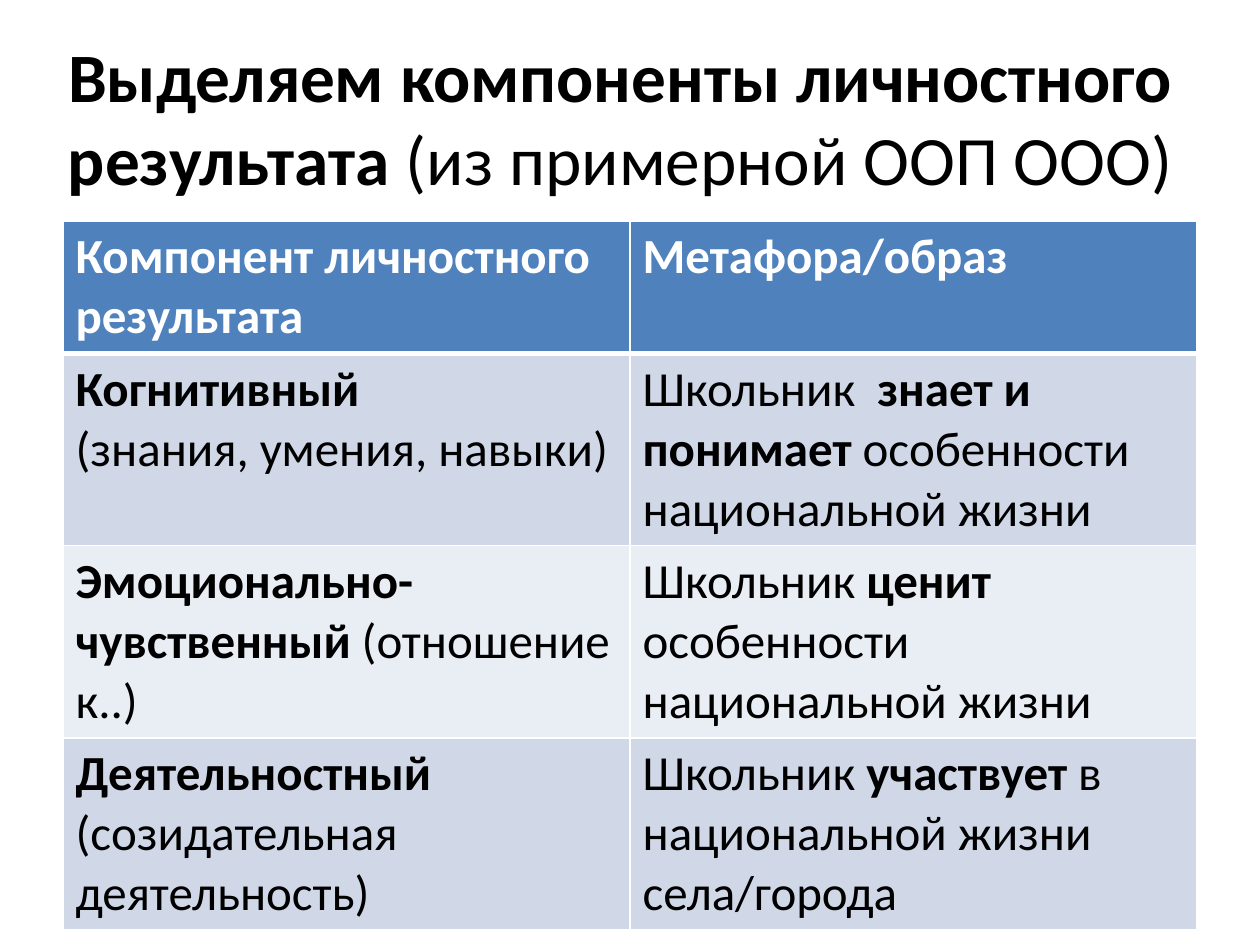
from lxml import etree
from pptx import Presentation
from pptx import util as u
from pptx.dml.color import RGBColor
from pptx.enum import text
from pptx.oxml.ns import qn

PX_PER_INCH = 126
FONT = "Calibri"
COLORS = {
    "header": "4F81BD",
    "odd": "D0D8E8",
    "even": "E9EDF4",
    "border": "FFFFFF",
    "header_text": "FFFFFF",
    "text": "000000",
}

# Each cell is a list of paragraphs; each paragraph is a list of (words, bold).
TITLE = [("Выделяем компоненты личностного результата ", True),
         ("(из примерной ООП ООО)", False)]
ROWS = [
    [[[("Компонент личностного результата", True)]],
     [[("Метафора/образ", True)]]],
    [[[("Когнитивный", True)], [("(знания, умения, навыки)", False)]],
     [[("Школьник  ", False), ("знает и понимает", True),
       (" особенности национальной жизни", False)]]],
    [[[("Эмоционально-чувственный", True), (" (отношение к..)", False)]],
     [[("Школьник ", False), ("ценит ", True),
       ("особенности национальной жизни", False)]]],
    [[[("Деятельностный", True)], [("(созидательная деятельность)", False)]],
     [[("Школьник ", False), ("участвует ", True),
       ("в национальной жизни села/города", False)]]],
]


def px(length):
    return u.Emu(round(length * u.Inches(1) / PX_PER_INCH))


def color(name):
    return RGBColor.from_string(COLORS[name])


def write_spans(para, spans, size, color_name):
    para.font.name = FONT
    para.font.size = u.Pt(size)
    para.font.color.rgb = color(color_name)
    for words, bold in spans:
        span = para.add_run()
        span.text = words
        span.font.bold = bold


def add_title(page):
    title = page.shapes.title
    title.left, title.top = px(44), px(38)
    title.width, title.height = px(1153), px(157)
    frame = title.text_frame
    frame.auto_size = text.MSO_AUTO_SIZE.NONE
    frame.vertical_anchor = text.MSO_ANCHOR.MIDDLE
    para = frame.paragraphs[0]
    para.alignment = text.PP_ALIGN.CENTER
    write_spans(para, TITLE, 39.6, "text")


def set_borders(cell, widths):
    """Draw cell edges; widths maps an edge tag to points, in schema order."""
    props = cell._tc.get_or_add_tcPr()
    for position, (edge, width) in enumerate(widths.items()):
        line = etree.Element(qn(f"a:{edge}"), w=str(u.Pt(width)))
        fill = etree.SubElement(line, qn("a:solidFill"))
        etree.SubElement(fill, qn("a:srgbClr"), val=COLORS["border"])
        props.insert(position, line)


def fill_cell(cell, paragraphs, row):
    is_header = row == 0
    fill_name = "header" if is_header else "odd" if row % 2 else "even"
    cell.fill.solid()
    cell.fill.fore_color.rgb = color(fill_name)
    set_borders(cell, {"lnL": 1, "lnR": 1, "lnT": 3 if row == 1 else 1,
                       "lnB": 3 if is_header else 1})
    frame = cell.text_frame
    for index, spans in enumerate(paragraphs):
        para = frame.add_paragraph() if index else frame.paragraphs[0]
        write_spans(para, spans, 28, "header_text" if is_header else "text")


def add_components_table(page):
    header_height, body_height = 132, 192
    height = header_height + body_height * (len(ROWS) - 1)
    table = page.shapes.add_table(len(ROWS), len(ROWS[0]), px(63), px(221),
                                  px(1134), px(height)).table
    for row, cells in enumerate(ROWS):
        table.rows[row].height = px(body_height if row else header_height)
        for column, paragraphs in enumerate(cells):
            fill_cell(table.cell(row, column), paragraphs, row)


def main():
    deck = Presentation()
    deck.slide_width, deck.slide_height = px(1260), px(945)
    page = deck.slides.add_slide(deck.slide_layouts.get_by_name("Title Only"))
    add_title(page)
    add_components_table(page)
    deck.save("out.pptx")


if __name__ == "__main__":
    main()
